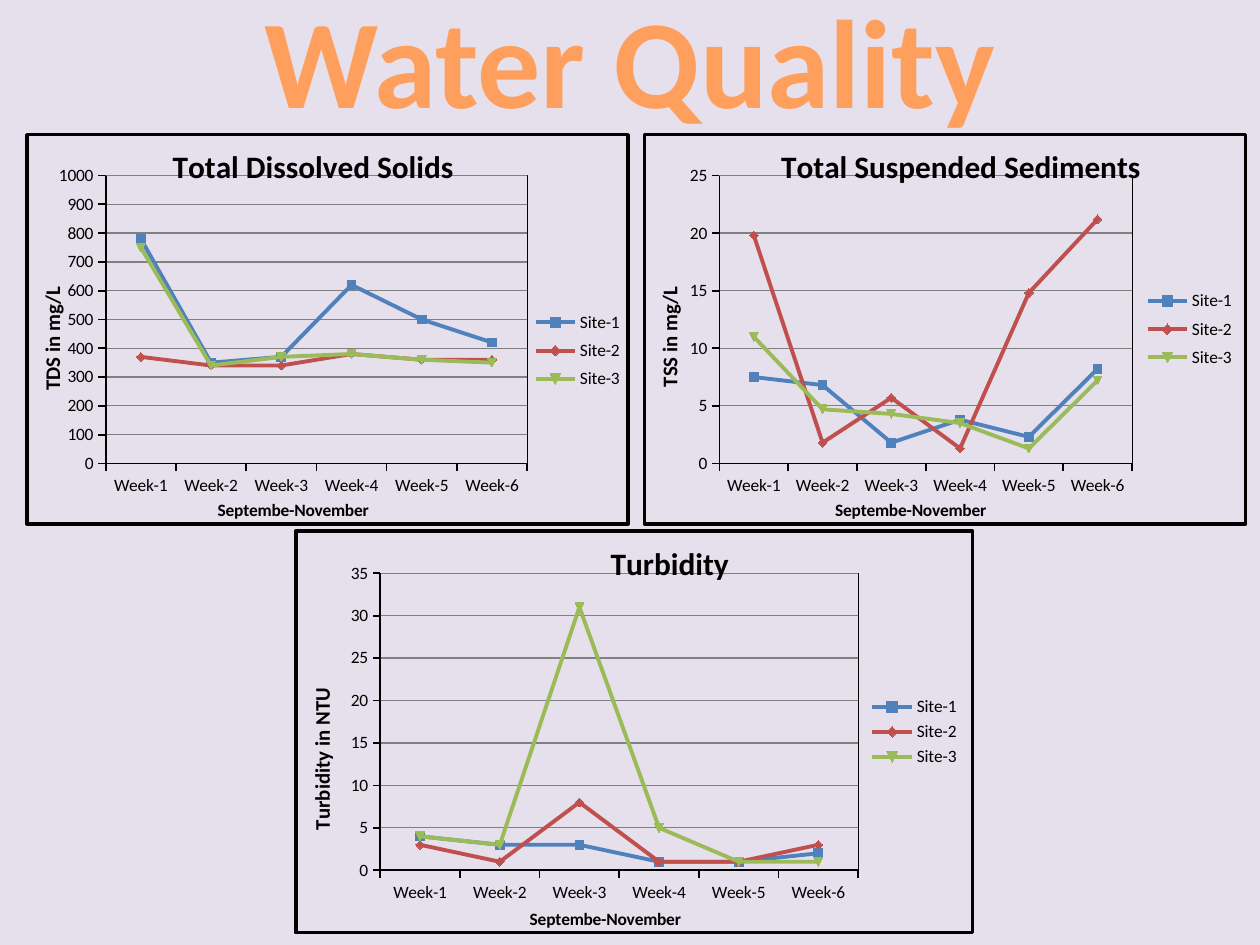
from lxml import etree
from pptx import Presentation
from pptx.chart.data import CategoryChartData
from pptx.dml.color import RGBColor
from pptx.enum.chart import XL_CHART_TYPE, XL_LEGEND_POSITION, XL_TICK_MARK
from pptx.enum.text import MSO_ANCHOR, MSO_AUTO_SIZE, PP_ALIGN
from pptx.oxml import parse_xml
from pptx.oxml.ns import qn
from pptx.util import Pt

LINE_MARKERS = XL_CHART_TYPE.LINE_MARKERS
RIGHT = XL_LEGEND_POSITION.RIGHT
OUTSIDE = XL_TICK_MARK.OUTSIDE
NS_A = "http://schemas.openxmlformats.org/drawingml/2006/main"
NS_C = "http://schemas.openxmlformats.org/drawingml/2006/chart"

FONT = "Calibri"
BLACK, GRID, BACKGROUND = "000000", "808080", "E6E0EC"
TITLE = "Water Quality"
TITLE_STOPS = [(0, "FFA367"), (25, "FF9F5D"), (50, "F38E3A"), (75, "FF9F5D"), (100, "FFA367")]
WEEKS = [f"Week-{n}" for n in range(1, 7)]
PERIOD = "Septembe-November"
SITES = [("Site-1", "4F81BD"), ("Site-2", "C0504D"), ("Site-3", "9BBB59")]

# Boxes are in points; plot, legend and heading places are fractions of the chart.
CHARTS = [
    {"title": "Turbidity", "unit": "Turbidity in NTU", "top": 35, "step": 5,
     "box": (168, 302.5, 388.8, 231.5), "plot": (0.125, 0.105, 0.706, 0.74),
     "heading": (0.457, 0.012), "legend": (0.844, 0.4, 0.14, 0.2), "period": (0.341, 0.93),
     "values": [(4, 3, 3, 1, 1, 2), (3, 1, 8, 1, 1, 3), (4, 3, 31, 5, 1, 1)]},
    {"title": "Total Suspended Sediments", "unit": "TSS in mg/L", "top": 25, "step": 5,
     "box": (367.2, 76, 345.6, 224.5), "plot": (0.125, 0.105, 0.686, 0.74),
     "heading": (0.218, 0.012), "legend": (0.827, 0.38, 0.16, 0.24), "period": (0.312, 0.928),
     "values": [(7.5, 6.8, 1.8, 3.8, 2.3, 8.2), (19.8, 1.8, 5.7, 1.3, 14.8, 21.2),
                (11, 4.7, 4.3, 3.5, 1.3, 7.2)]},
    {"title": "Total Dissolved Solids", "unit": "TDS in mg/L", "top": 1000, "step": 100,
     "box": (14.4, 76, 345.6, 224.5), "plot": (0.131, 0.105, 0.701, 0.74),
     "heading": (0.233, 0.012), "legend": (0.836, 0.435, 0.16, 0.24), "period": (0.312, 0.928),
     "values": [(780, 350, 370, 620, 500, 420), (370, 340, 340, 380, 360, 360),
                (750, 340, 370, 380, 360, 350)]},
]
UNIT_PLACE = (0.012, 0.382)


def rgb(value):
    return RGBColor.from_string(value)


def set_font(font, size, bold=False, color=BLACK):
    for name, value in {"name": FONT, "size": Pt(size), "bold": bold}.items():
        setattr(font, name, value)
    font.color.rgb = rgb(color)


def set_line(line, color, width):
    line.color.rgb = rgb(color)
    line.width = Pt(width)


def place(element, fractions, inner=False):
    """Give a chart part a manual layout, as x, y and optionally w, h."""
    for old in element.findall(qn("c:layout")):
        element.remove(old)
    layout = etree.Element(qn("c:layout"))
    manual = etree.SubElement(layout, qn("c:manualLayout"))
    values = [("layoutTarget", "inner")] if inner else []
    values += [("xMode", "edge"), ("yMode", "edge")] + list(zip("xywh", fractions))
    for tag, value in values:
        etree.SubElement(manual, qn(f"c:{tag}")).set("val", str(value))
    overlay = element.find(qn("c:overlay"))
    if overlay is None:
        element.insert(0, layout)
    else:
        overlay.addprevious(layout)


def outline(width):
    """Shape properties with no fill and a black line."""
    return parse_xml(
        f'<c:spPr xmlns:c="{NS_C}" xmlns:a="{NS_A}"><a:noFill/><a:ln w="{Pt(width)}">'
        f'<a:solidFill><a:srgbClr val="{BLACK}"/></a:solidFill></a:ln></c:spPr>')


def set_heading(owner, text, size, fractions):
    """Write and place the title of an axis or of a chart."""
    title = owner.chart_title if hasattr(owner, "chart_title") else owner.axis_title
    p = title.text_frame.paragraphs[0]
    r = p.add_run()
    r.text = text
    set_font(r.font, size, bold=True)
    place(title._element, fractions)
    return title


def add_line_chart(slide, info):
    data = CategoryChartData(number_format="0")
    data.categories = WEEKS
    for (site, _), values in zip(SITES, info["values"]):
        data.add_series(site, values)
    chart = slide.shapes.add_chart(LINE_MARKERS, *map(Pt, info["box"]), data).chart
    set_font(chart.font, 10)

    title = set_heading(chart, info["title"], 18, info["heading"])
    title._element.find(qn("c:overlay")).set("val", "1")
    set_heading(chart.category_axis, PERIOD, 10, info["period"])
    set_heading(chart.value_axis, info["unit"], 12, UNIT_PLACE)

    for axis in (chart.category_axis, chart.value_axis):
        axis.major_tick_mark = OUTSIDE
        set_line(axis.format.line, BLACK, 1)
    axis = chart.value_axis
    for name, value in {"minimum_scale": 0, "maximum_scale": info["top"],
                        "major_unit": info["step"], "has_major_gridlines": True}.items():
        setattr(axis, name, value)
    axis.tick_labels.number_format = "0"
    axis.tick_labels.number_format_is_linked = False
    set_line(axis.major_gridlines.format.line, GRID, 0.75)

    chart.has_legend = True
    chart.legend.position = RIGHT
    chart.legend.include_in_layout = False
    place(chart.legend._element, info["legend"])

    chart.plots[0].vary_by_categories = False
    for series, (_, color) in zip(chart.plots[0].series, SITES):
        series.smooth = False
        set_line(series.format.line, color, 2.25)
        series.marker.format.fill.solid()
        series.marker.format.fill.fore_color.rgb = rgb(color)
        set_line(series.marker.format.line, color, 0.75)

    space = chart._chartSpace
    plot_area = space.chart.plotArea
    place(plot_area, info["plot"], inner=True)
    plot_area.append(outline(0.25))
    space.find(qn("c:txPr")).addprevious(outline(2))


def add_title(slide):
    sp = slide.shapes.title
    sp.left, sp.top, sp.width, sp.height = map(Pt, (36, -12, 648, 90))
    tf = sp.text_frame
    tf.auto_size = MSO_AUTO_SIZE.NONE
    tf.vertical_anchor = MSO_ANCHOR.MIDDLE
    p = tf.paragraphs[0]
    p.alignment = PP_ALIGN.CENTER
    r = p.add_run()
    r.text = TITLE
    for name, value in {"name": FONT, "size": Pt(72), "bold": True}.items():
        setattr(r.font, name, value)
    stops = "".join(f'<a:gs pos="{pos * 1000}"><a:srgbClr val="{color}"/></a:gs>'
                    for pos, color in TITLE_STOPS)
    r._r.get_or_add_rPr().insert(0, parse_xml(
        f'<a:gradFill xmlns:a="{NS_A}"><a:gsLst>{stops}</a:gsLst>'
        '<a:lin ang="5400000" scaled="0"/></a:gradFill>'))


def main():
    prs = Presentation()
    prs.slide_width, prs.slide_height = Pt(720), Pt(540)
    slide = prs.slides.add_slide(prs.slide_layouts[5])
    slide.background.fill.solid()
    slide.background.fill.fore_color.rgb = rgb(BACKGROUND)
    for info in CHARTS:
        add_line_chart(slide, info)
    add_title(slide)
    prs.save("out.pptx")


if __name__ == "__main__":
    main()
